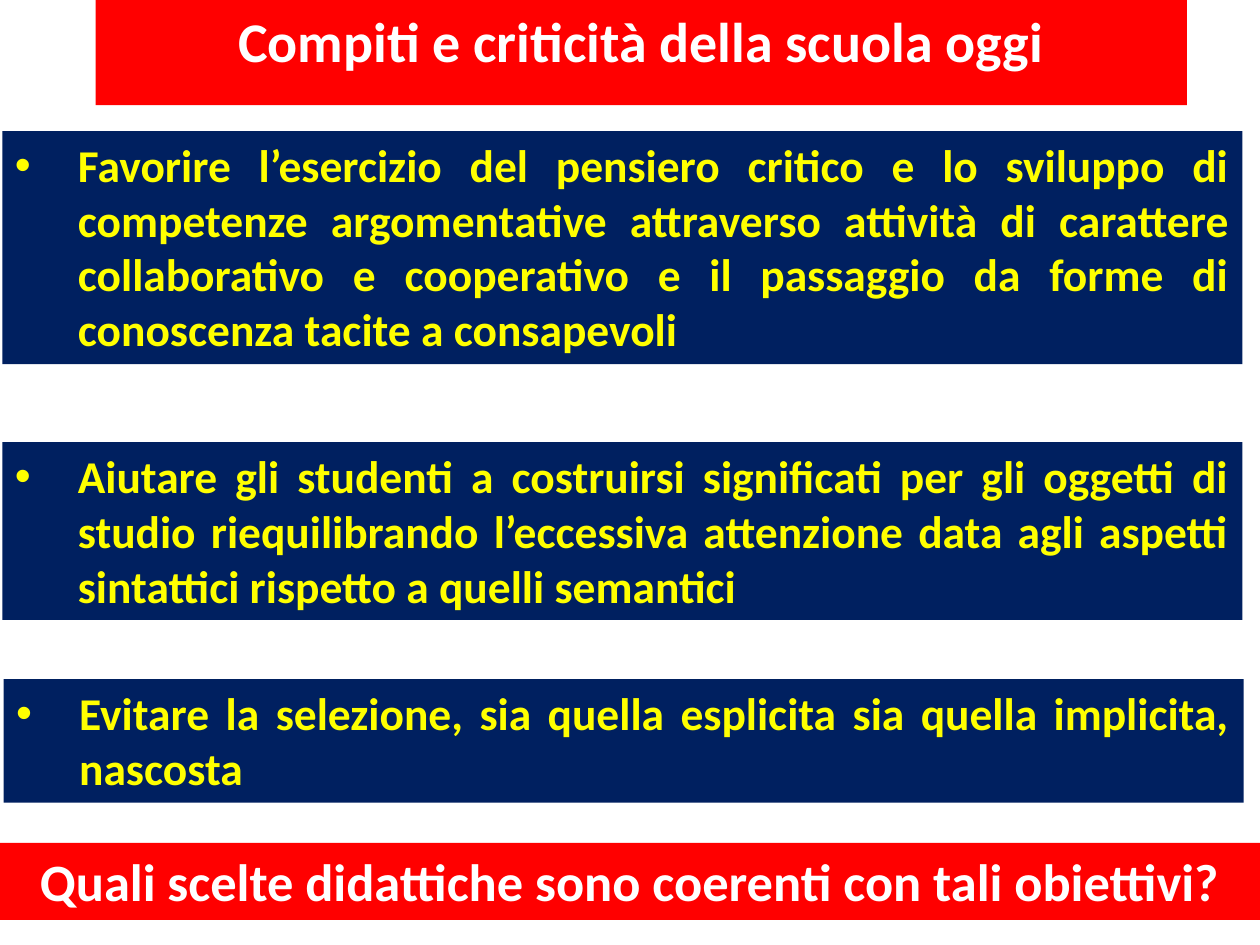
from pptx import Presentation
from pptx.dml.color import RGBColor
from pptx.enum.text import MSO_ANCHOR, MSO_AUTO_SIZE, PP_ALIGN
from pptx.oxml.ns import qn
from pptx.util import Inches, Pt
from lxml.etree import SubElement

RED = "FF0000"
NAVY = "002060"
YELLOW = "FFFF00"
WHITE = "FFFFFF"

TASKS = [
    (0.02, 1.04, 1.85, "Favorire l’esercizio del pensiero critico e lo sviluppo di competenze argomentative attraverso attività di carattere collaborativo e cooperativo e il passaggio da forme di conoscenza tacite a consapevoli"),
    (0.02, 3.51, 1.41, "Aiutare gli studenti a costruirsi significati per gli oggetti di studio riequilibrando l’eccessiva attenzione data agli aspetti sintattici rispetto a quelli semantici"),
    (0.03, 5.39, 0.98, "Evitare la selezione, sia quella esplicita sia quella implicita, nascosta"),
]


def color(value):
    return RGBColor.from_string(value)


def place(shape, left, top, width, height):
    shape.left, shape.top = Inches(left), Inches(top)
    shape.width, shape.height = Inches(width), Inches(height)


def fill_box(shape, fill, text, size, font_color, alignment):
    shape.fill.solid()
    shape.fill.fore_color.rgb = color(fill)
    text_frame = shape.text_frame
    text_frame.text = text
    text_frame.word_wrap = True
    text_frame.auto_size = MSO_AUTO_SIZE.SHAPE_TO_FIT_TEXT
    text_frame.vertical_anchor = MSO_ANCHOR.TOP
    paragraph = text_frame.paragraphs[0]
    paragraph.alignment = alignment
    font = paragraph.runs[0].font
    font.name = "Calibri"
    font.size = Pt(size)
    font.bold = True
    font.color.rgb = color(font_color)


def add_bullet(paragraph):
    properties = paragraph._p.get_or_add_pPr()
    properties.set("marL", str(Inches(0.5)))
    properties.set("indent", str(Inches(-0.5)))
    SubElement(properties, qn("a:buFont")).set("typeface", "Arial")
    SubElement(properties, qn("a:buChar")).set("char", "•")


def add_title(slide, text):
    title = slide.shapes.title
    place(title, 0.76, 0, 8.66, 0.64)
    fill_box(title, RED, text, 32, WHITE, PP_ALIGN.CENTER)


def add_task(slide, left, top, height, text):
    box = slide.shapes.add_textbox(0, 0, 0, 0)
    place(box, left, top, 9.84, height)
    fill_box(box, NAVY, text, 26, YELLOW, PP_ALIGN.JUSTIFY)
    add_bullet(box.text_frame.paragraphs[0])


def add_question(slide, text):
    box = slide.shapes.add_textbox(0, 0, 0, 0)
    place(box, 0, 6.69, 10, 0.61)
    fill_box(box, RED, text, 30, WHITE, PP_ALIGN.CENTER)


def main():
    presentation = Presentation()
    presentation.slide_width = Inches(10)
    presentation.slide_height = Inches(7.5)
    slide = presentation.slides.add_slide(presentation.slide_layouts[5])
    add_title(slide, "Compiti e criticità della scuola oggi")
    for task in TASKS:
        add_task(slide, *task)
    add_question(slide, "Quali scelte didattiche sono coerenti con tali obiettivi?")
    presentation.save("out.pptx")


if __name__ == "__main__":
    main()
